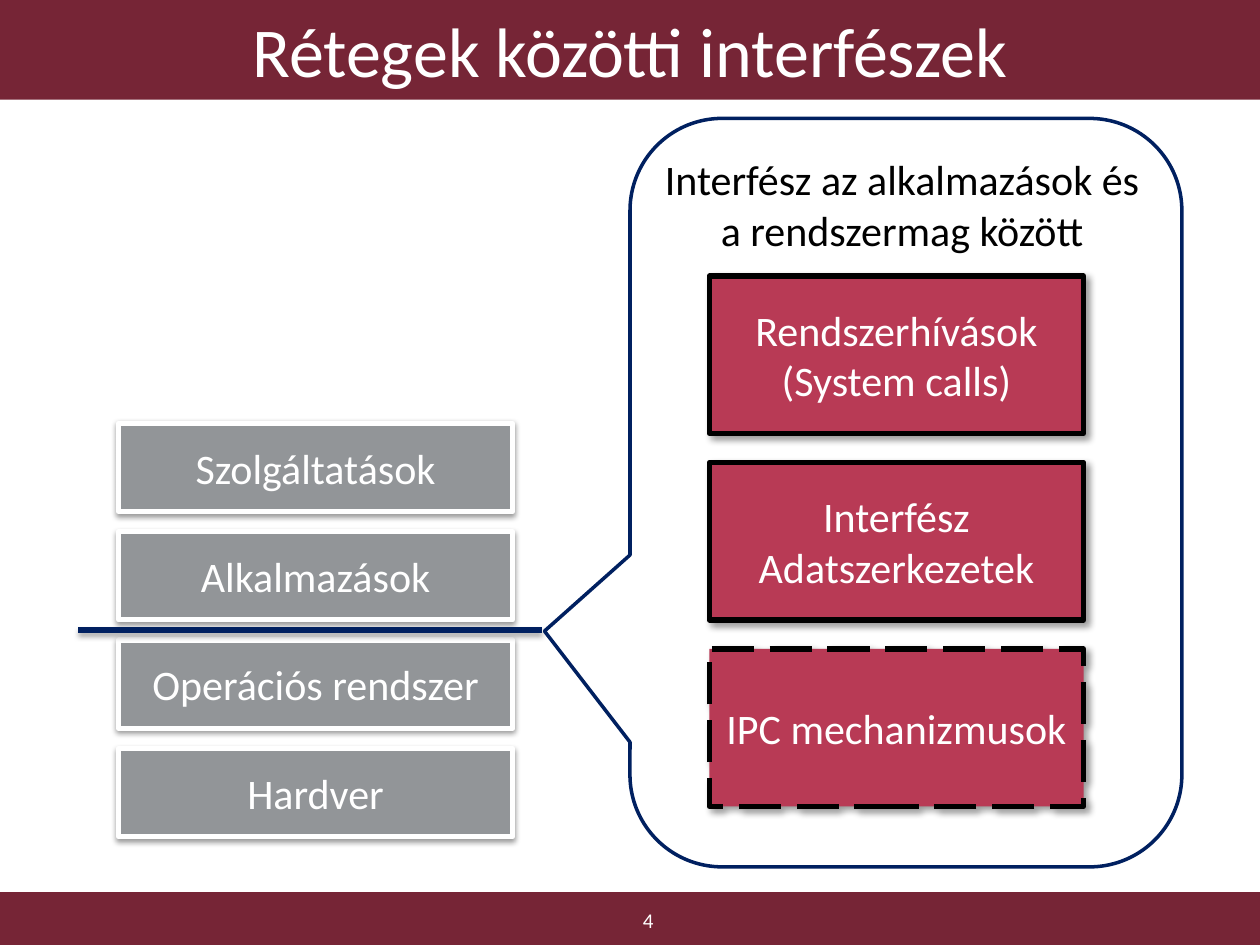
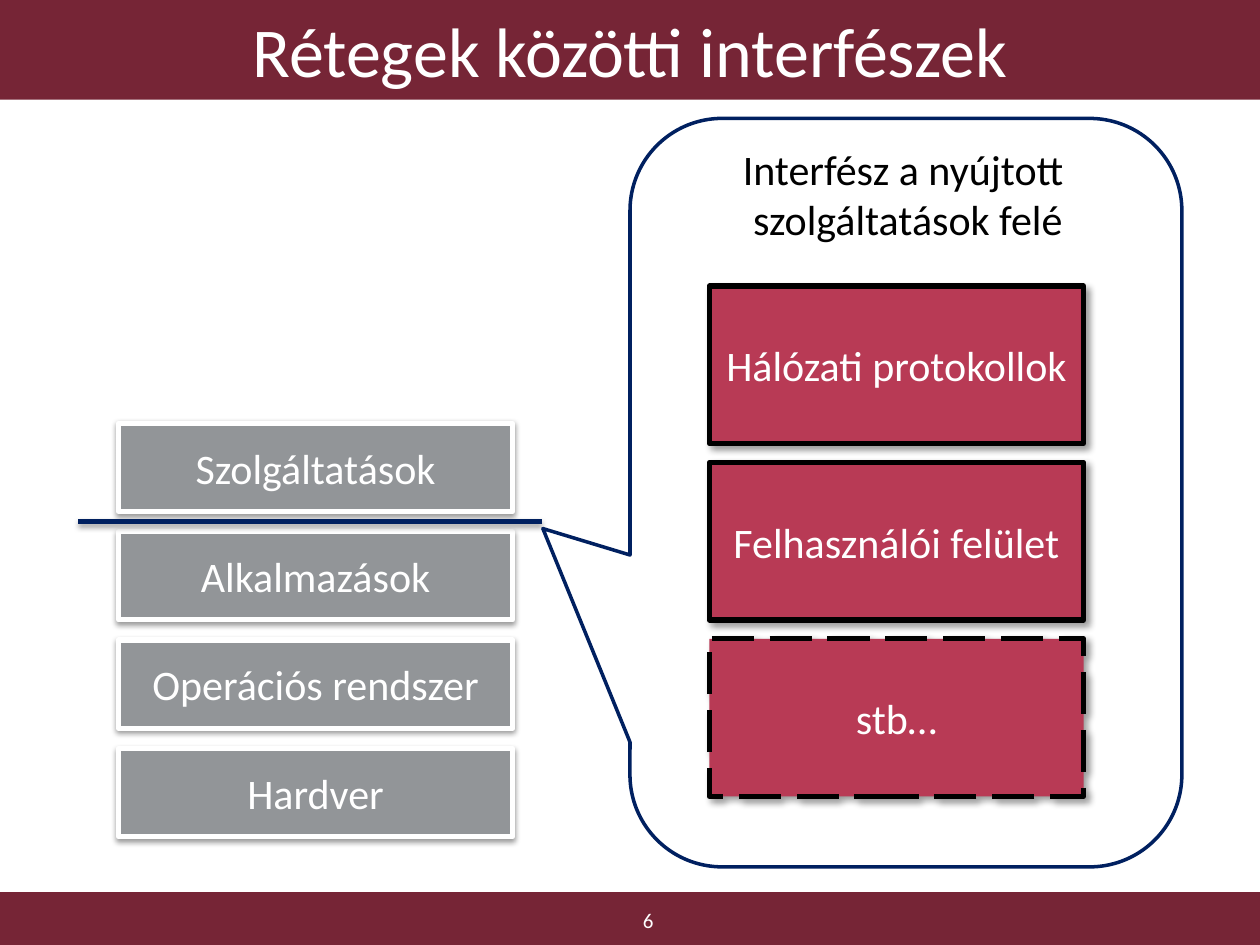
from dataclasses import dataclass

from lxml.etree import SubElement
from pptx import Presentation
from pptx.dml.color import RGBColor
from pptx.enum.dml import MSO_LINE as Dash
from pptx.enum.shapes import MSO_CONNECTOR as Link, MSO_SHAPE as Form
from pptx.enum.text import MSO_ANCHOR as Anchor, MSO_AUTO_SIZE as Fit, PP_ALIGN as Align
from pptx.oxml.ns import qn
from pptx.util import Inches, Pt

FONT = "Calibri"
WINE, ROSE, GREY = "762536", "B83A55", "929598"
NAVY, WHITE, BLACK = "002060", "FFFFFF", "000000"
TITLE = "Rétegek közötti interfészek"
LAYERS = ["Szolgáltatások", "Alkalmazások", "Operációs rendszer", "Hardver"]
STACK_TOP, STACK_STEP = 3.36, 0.86
CARD_MID = 3.67


@dataclass
class Shade:
    alpha: int
    blur: float
    dist: float
    angle: int


@dataclass
class Style:
    fill: str
    line: str = ""
    width: float = 0
    shade: Shade | None = None
    size: int = 24


@dataclass
class Area:
    left: float
    top: float
    width: float
    height: float

    def sizes(self) -> list:
        return [Inches(n) for n in (self.left, self.top, self.width, self.height)]


@dataclass
class Page:
    number: str
    below: int
    tip: tuple[float, float]
    head: str
    place: Area
    cards: list[str]
    step: float


BAND = Style(WINE, size=40)
LAYER = Style(GREY, WHITE, 3, Shade(38, 3.1, 1.6, 90))
CARD = Style(ROSE, BLACK, 3, Shade(40, 4, 3, 45))
BUBBLE = Style(WHITE, NAVY, 2)
RULE_SHADE = Shade(35, 3.1, 1.8, 90)

PAGES = [
    Page("4", 2, (-0.655, 0.185),
         "Interfész az alkalmazások és\na rendszermag között",
         Area(5.16, 1.17, 4, 0.91),
         ["Rendszerhívások\n(System calls)", "Interfész Adatszerkezetek",
          "IPC mechanizmusok"], 1.48),
    Page("6", 1, (-0.658, 0.048),
         "Interfész a nyújtott \vszolgáltatások felé",
         Area(5.78, 1.09, 2.85, 0.91),
         ["Hálózati protokollok", "Felhasználói felület", "stb…"], 1.4),
]


def paint(target, color: str) -> None:
    target.rgb = RGBColor.from_string(color)


def cast(item, shade: Shade | None) -> None:
    effects = SubElement(item._element.spPr, qn("a:effectLst"))
    if shade:
        outer = SubElement(effects, qn("a:outerShdw"), {
            "blurRad": str(Pt(shade.blur)), "dist": str(Pt(shade.dist)),
            "dir": str(shade.angle * 60000), "rotWithShape": "0"})
        tint = SubElement(outer, qn("a:srgbClr"), val=BLACK)
        SubElement(tint, qn("a:alpha"), val=str(shade.alpha * 1000))


def write(frame, text: str, size: int, color: str) -> None:
    frame.text = text
    for para in frame.paragraphs:
        para.alignment = Align.CENTER
        for run in para.runs:
            run.font.name = FONT
            run.font.size = Pt(size)
            paint(run.font.color, color)


def add_box(slide, area: Area, style: Style, text: str = "", form=Form.RECTANGLE):
    box = slide.shapes.add_shape(form, *area.sizes())
    box.fill.solid()
    paint(box.fill.fore_color, style.fill)
    if style.line:
        paint(box.line.color, style.line)
        box.line.width = Pt(style.width)
    else:
        box.line.fill.background()
    cast(box, style.shade)
    if text:
        box.text_frame.word_wrap = True
        box.text_frame.vertical_anchor = Anchor.MIDDLE
        write(box.text_frame, text, style.size, WHITE)
    return box


def add_label(slide, area: Area, text: str, size: int, color: str):
    frame = slide.shapes.add_textbox(*area.sizes()).text_frame
    frame.word_wrap = True
    write(frame, text, size, color)
    return frame


def add_rule(slide, top: float) -> None:
    rule = slide.shapes.add_connector(
        Link.STRAIGHT, Inches(0.62), Inches(top), Inches(4.3), Inches(top))
    paint(rule.line.color, NAVY)
    rule.line.width = Pt(3)
    cast(rule, RULE_SHADE)


def add_frame(slide, number: str) -> None:
    add_box(slide, Area(0, 7.08, 10, 0.42), BAND)
    add_box(slide, Area(0, 0, 10, 0.79), BAND, TITLE)
    foot = add_label(slide, Area(3.52, 7.11, 3.25, 0.39), number, 12, WHITE)
    foot.vertical_anchor = Anchor.MIDDLE


def add_stack(slide, below: int) -> None:
    for i, name in enumerate(LAYERS):
        add_box(slide, Area(0.94, STACK_TOP + i * STACK_STEP, 3.13, 0.7), LAYER, name)
    add_rule(slide, STACK_TOP + below * STACK_STEP - 0.08)


def add_bubble(slide, page: Page) -> None:
    bubble = add_box(slide, Area(5, 0.94, 4.38, 5.94), BUBBLE,
                     form=Form.ROUNDED_RECTANGULAR_CALLOUT)
    for i, value in enumerate((*page.tip, 0.167)):
        bubble.adjustments[i] = value
    head = add_label(slide, page.place, page.head, 24, BLACK)
    head.word_wrap = False
    head.auto_size = Fit.SHAPE_TO_FIT_TEXT
    for i, text in enumerate(page.cards):
        top = CARD_MID + (i - 1) * page.step
        card = add_box(slide, Area(5.63, top, 2.97, 1.25), CARD, text)
    card.line.dash_style = Dash.LONG_DASH


def main() -> None:
    deck = Presentation()
    deck.slide_width, deck.slide_height = Inches(10), Inches(7.5)
    for page in PAGES:
        slide = deck.slides.add_slide(deck.slide_layouts[6])
        add_frame(slide, page.number)
        add_stack(slide, page.below)
        add_bubble(slide, page)
    deck.save("out.pptx")


if __name__ == "__main__":
    main()
